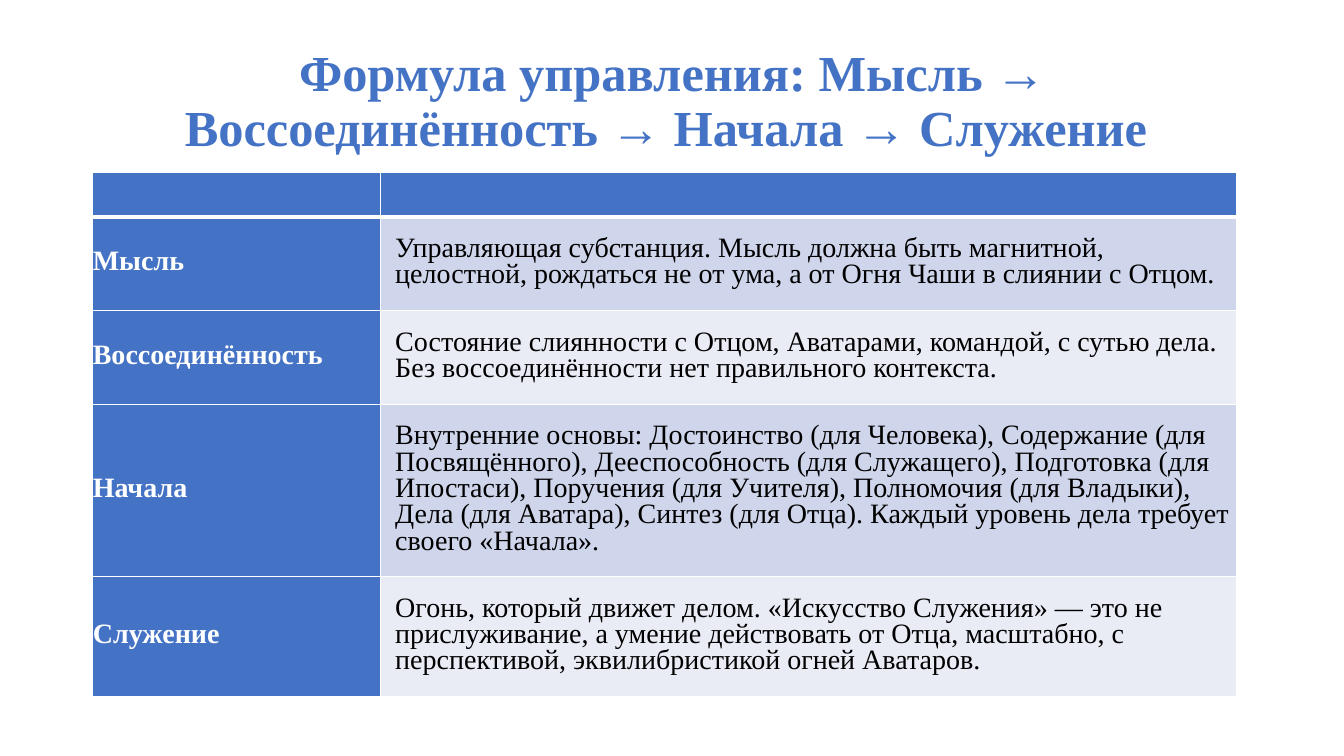
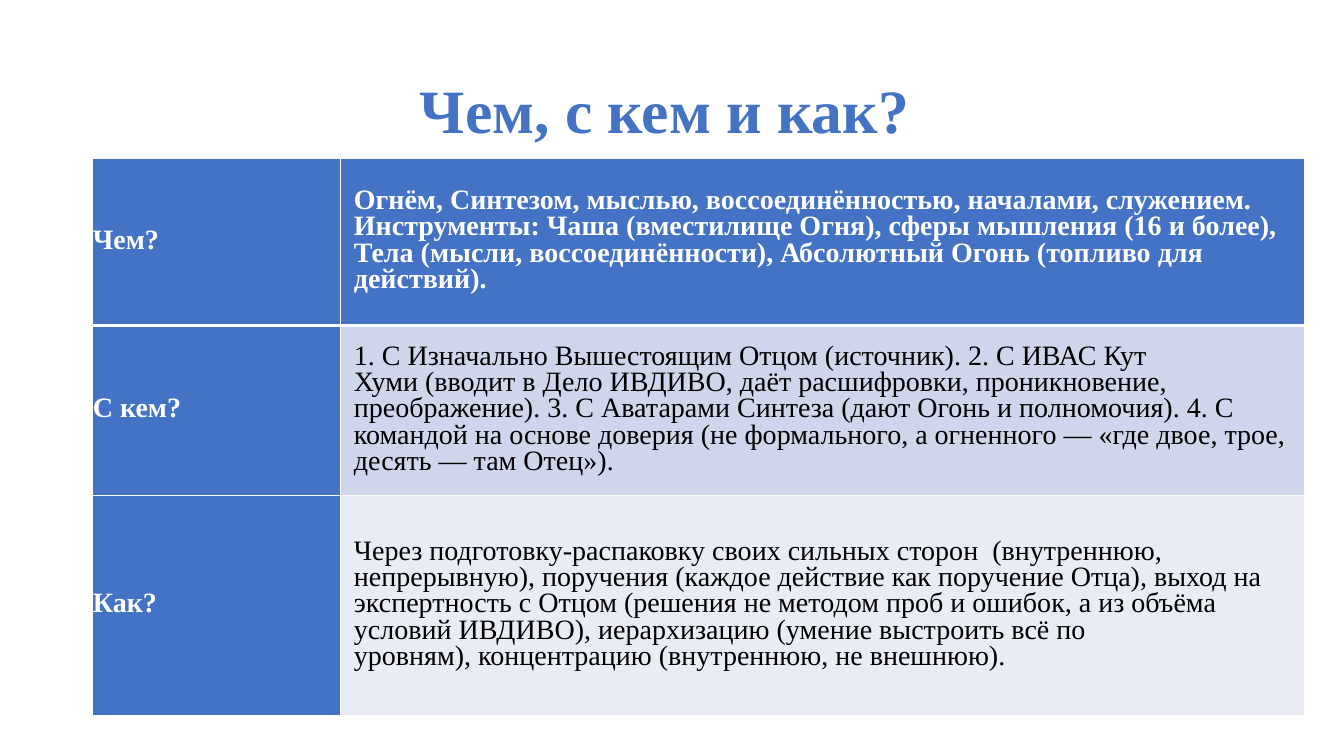
"""Build two slides, each a centred title above a two-column table."""
from lxml import etree
from pptx import Presentation
from pptx.dml.color import RGBColor
from pptx.enum.text import MSO_ANCHOR, PP_ALIGN
from pptx.oxml.ns import qn
from pptx.util import Inches, Pt

MIDDLE = MSO_ANCHOR.MIDDLE
CENTER = PP_ALIGN.CENTER
BLUE, WHITE, BLACK = "4472C4", "FFFFFF", "000000"
BANDS = ["CFD5EA", "E9EBF5"]
FACE = "Times New Roman"
TIE, HARD = "~", chr(160)

SLIDES = [
    {
        "title": "Формула управления: Мысль → Воссоединённость → Начала → Служение ",
        "size": 36, "high": 1.24, "top": 1.71, "pad": 0.15, "edge": 0.09,
        "cols": [2.85, 8.49],
        "rows": [
            (0.44, "", ""),
            (0.93, "Мысль",
             "Управляющая субстанция. Мысль должна быть магнитной, целостной, "
             "рождаться не от ума, а от Огня Чаши в слиянии с Отцом."),
            (0.93, "Воссоединённость",
             "Состояние слиянности с Отцом, Аватарами, командой, с сутью дела. "
             "Без воссоединённости нет правильного контекста."),
            (1.71, "Начала",
             "Внутренние основы: Достоинство (для Человека), Содержание (для "
             "Посвящённого), Дееспособность (для Служащего), Подготовка (для "
             "Ипостаси), Поручения (для Учителя), Полномочия (для Владыки), "
             "Дела (для Аватара), Синтез (для Отца). Каждый уровень дела "
             "требует своего «Начала»."),
            (1.19, "Служение",
             "Огонь, который движет делом. «Искусство Служения» — это не "
             "прислуживание, а умение действовать от Отца, масштабно, с "
             "перспективой, эквилибристикой огней Аватаров."),
        ],
    },
    {
        "title": "Чем, с кем и как? ",
        "size": 44, "high": 1.45, "top": 1.57, "pad": 0.13, "edge": 0.08,
        "cols": [2.46, 9.56],
        "rows": [
            (1.66, "Чем?",
             "Огнём, Синтезом, мыслью, воссоединённостью, началами, служением. "
             "Инструменты: Чаша (вместилище Огня), сферы мышления (16 и более), "
             "Тела (мысли, воссоединённости), Абсолютный Огонь (топливо для "
             "действий)."),
            (1.69, "С кем?",
             "1.~С Изначально Вышестоящим Отцом~(источник). 2.~С ИВАС Кут "
             "Хуми~(вводит в Дело ИВДИВО, даёт расшифровки, проникновение, "
             "преображение). 3.~С Аватарами Синтеза~(дают Огонь и полномочия). "
             "4.~С командой~на основе доверия (не формального, а огненного — "
             "«где двое, трое, десять — там Отец»)."),
            (2.18, "Как?",
             "Через~подготовку-распаковку своих сильных сторон ~(внутреннюю, "
             "непрерывную),~поручения~(каждое действие как поручение Отца),~"
             "выход на экспертность с Отцом~(решения не методом проб и ошибок, "
             "а из объёма условий ИВДИВО),~иерархизацию~(умение выстроить всё "
             "по уровням),~концентрацию~(внутреннюю, не внешнюю)."),
        ],
    },
]


def write(frame, text, size, color, bold, space):
    """Put one styled paragraph in a text frame and return it."""
    para = frame.paragraphs[0]
    para.line_spacing = space
    if text:
        run = para.add_run()
        run.text = text.replace(TIE, HARD)
        look = {"name": FACE, "size": Pt(size), "bold": bold}
        for key, value in look.items():
            setattr(run.font, key, value)
        run.font.color.rgb = RGBColor.from_string(color)
    else:
        etree.SubElement(para._p, qn("a:endParaRPr"), sz="1200")
    return para


def border(cell, widths):
    """Draw white cell borders, with widths in points by side."""
    props = cell._tc.get_or_add_tcPr()
    for spot, (side, width) in enumerate(widths.items()):
        line = etree.Element(qn("a:ln" + side), w=str(Pt(width)))
        fill = etree.SubElement(line, qn("a:solidFill"))
        etree.SubElement(fill, qn("a:srgbClr"), val=WHITE)
        props.insert(spot, line)


deck = Presentation()
deck.slide_width, deck.slide_height = Inches(13.33), Inches(7.5)

for data in SLIDES:
    slide = deck.slides.add_slide(deck.slide_layouts[6])
    box = slide.shapes.add_textbox(
        Inches(0.92), Inches(0.4), Inches(11.5), Inches(data["high"]))
    frame = box.text_frame
    frame.word_wrap = True
    frame.vertical_anchor = MIDDLE
    write(frame, data["title"], data["size"], BLUE, True, 0.9).alignment = CENTER

    cols, rows = data["cols"], data["rows"]
    table = slide.shapes.add_table(
        len(rows), len(cols), Inches(0.92), Inches(data["top"]),
        Inches(sum(cols)), Inches(sum(row[0] for row in rows))).table
    table.first_row = table.horz_banding = False
    for col, width in zip(table.columns, cols):
        col.width = Inches(width)

    for r, (high, *texts) in enumerate(rows):
        table.rows[r].height = Inches(high)
        for c, text in enumerate(texts):
            cell = table.cell(r, c)
            head = r == 0 or c == 0
            form = {
                "vertical_anchor": MIDDLE,
                "margin_left": Inches(data["pad"] if c else 0),
                "margin_right": Inches(0 if c else data["pad"]),
                "margin_top": Inches(data["edge"]),
                "margin_bottom": Inches(data["edge"]),
            }
            for key, value in form.items():
                setattr(cell, key, value)
            cell.fill.solid()
            cell.fill.fore_color.rgb = RGBColor.from_string(
                BLUE if head else BANDS[(r - 1) % 2])
            border(cell, {"L": 1, "R": 1, "T": 3 if r == 1 else 1,
                          "B": 3 if r == 0 else 1})
            write(cell.text_frame, text, 20, WHITE if head else BLACK, head, Pt(18.8))

deck.save("out.pptx")
